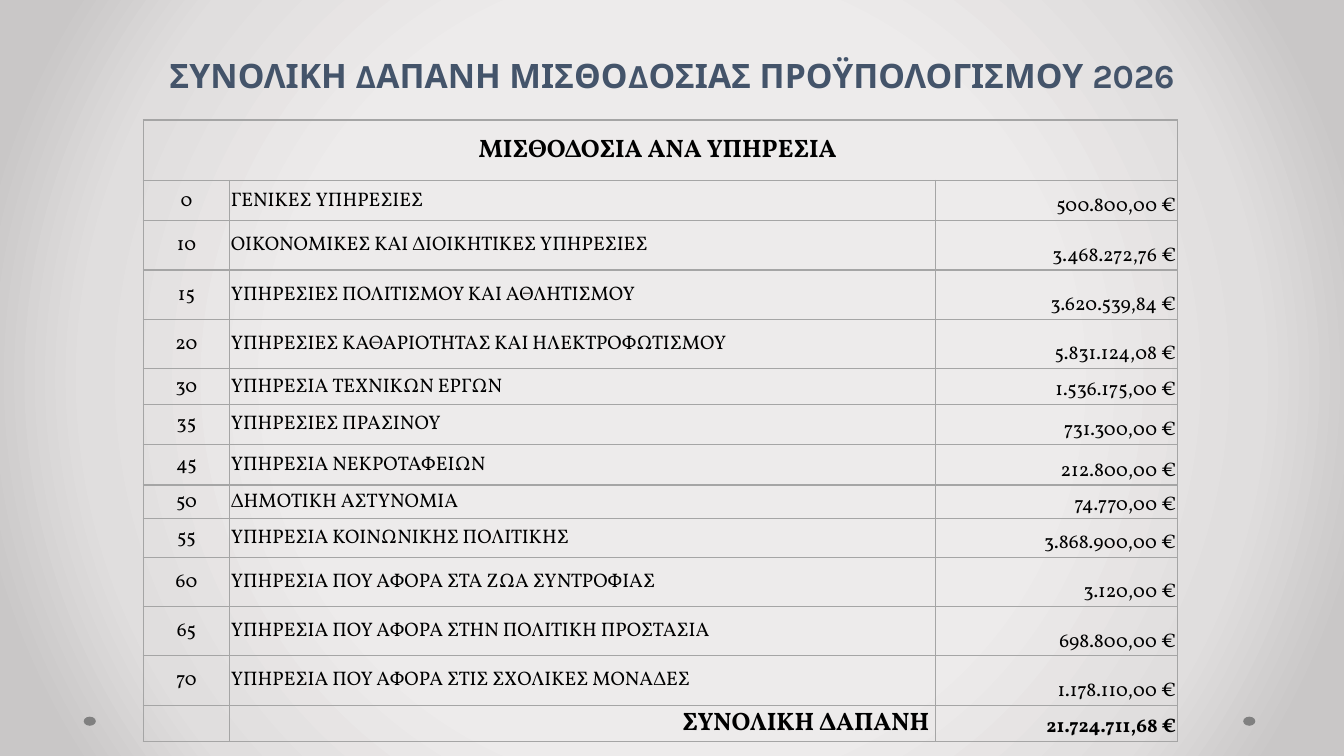
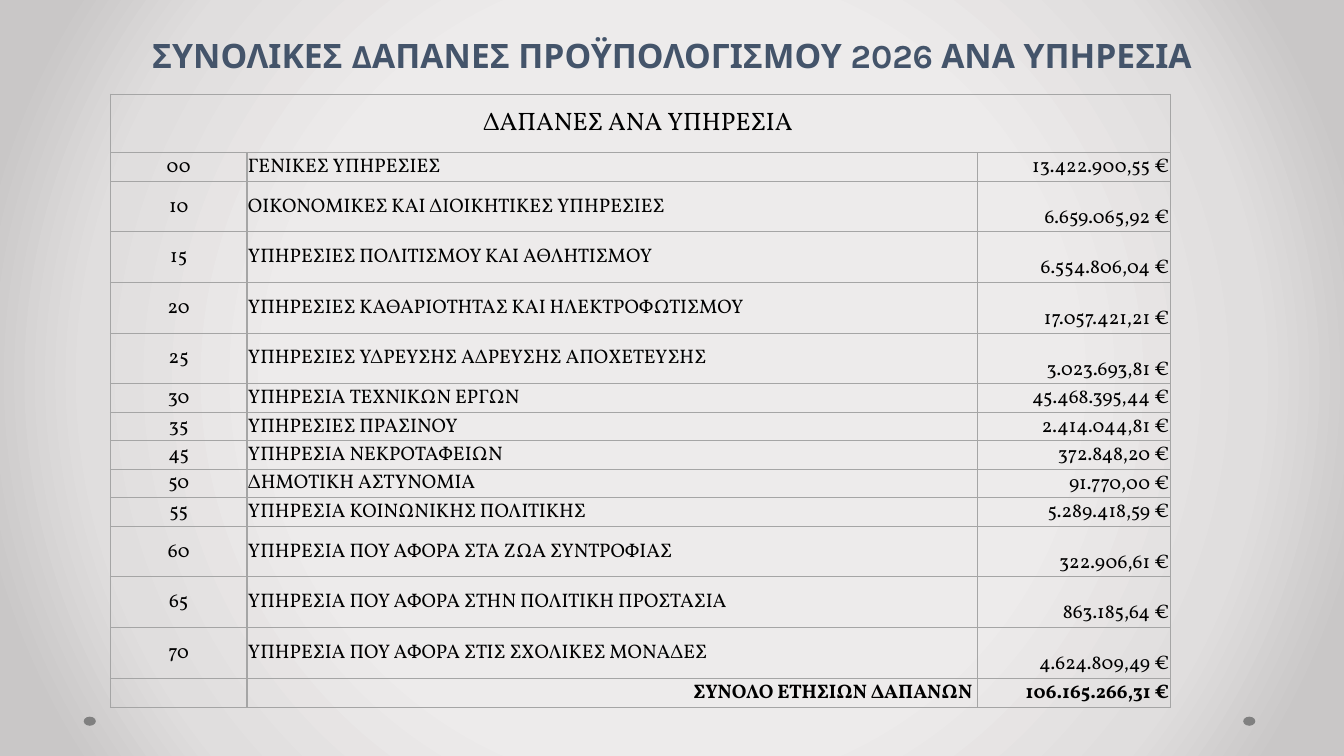
from pptx import Presentation, oxml
from pptx import util as u
from pptx.dml.color import RGBColor
from pptx.enum import shapes, text
from pptx.oxml.ns import nsdecls, qn

HUES = {"title": "44546A", "body": "000000", "rule": "A5A5A5", "dot": "808080"}
GLOW = {50: "EDEBEB", 76: "E0DEDE", 92: "C9C7C7"}
LEFT, MID, RIGHT = text.PP_ALIGN.LEFT, text.PP_ALIGN.CENTER, text.PP_ALIGN.RIGHT
MIDDLE, BOTTOM = text.MSO_ANCHOR.MIDDLE, text.MSO_ANCHOR.BOTTOM
INSETS = {"margin_left": u.Inches(0.01), "margin_top": u.Inches(0.01),
          "margin_right": u.Inches(0.01), "margin_bottom": 0}

NAMES = {
    0: "ΓΕΝΙΚΕΣ ΥΠΗΡΕΣΙΕΣ",
    10: "ΟΙΚΟΝΟΜΙΚΕΣ ΚΑΙ ΔΙΟΙΚΗΤΙΚΕΣ ΥΠΗΡΕΣΙΕΣ",
    15: "ΥΠΗΡΕΣΙΕΣ ΠΟΛΙΤΙΣΜΟΥ ΚΑΙ ΑΘΛΗΤΙΣΜΟΥ",
    20: "ΥΠΗΡΕΣΙΕΣ ΚΑΘΑΡΙΟΤΗΤΑΣ ΚΑΙ ΗΛΕΚΤΡΟΦΩΤΙΣΜΟΥ",
    25: "ΥΠΗΡΕΣΙΕΣ ΥΔΡΕΥΣΗΣ ΑΔΡΕΥΣΗΣ ΑΠΟΧΕΤΕΥΣΗΣ",
    30: "ΥΠΗΡΕΣΙΑ ΤΕΧΝΙΚΩΝ ΕΡΓΩΝ",
    35: "ΥΠΗΡΕΣΙΕΣ ΠΡΑΣΙΝΟΥ",
    45: "ΥΠΗΡΕΣΙΑ ΝΕΚΡΟΤΑΦΕΙΩΝ",
    50: "ΔΗΜΟΤΙΚΗ ΑΣΤΥΝΟΜΙΑ",
    55: "ΥΠΗΡΕΣΙΑ ΚΟΙΝΩΝΙΚΗΣ ΠΟΛΙΤΙΚΗΣ",
    60: "ΥΠΗΡΕΣΙΑ ΠΟΥ ΑΦΟΡΑ ΣΤΑ ΖΩΑ ΣΥΝΤΡΟΦΙΑΣ",
    65: "ΥΠΗΡΕΣΙΑ ΠΟΥ ΑΦΟΡΑ ΣΤΗΝ ΠΟΛΙΤΙΚΗ ΠΡΟΣΤΑΣΙΑ",
    70: "ΥΠΗΡΕΣΙΑ ΠΟΥ ΑΦΟΡΑ ΣΤΙΣ ΣΧΟΛΙΚΕΣ ΜΟΝΑΔΕΣ",
}

# Places and sizes are percentages of the slide's width and height.
PAGES = [
    {"title": "ΣΥΝΟΛΙΚΗ ΔΑΠΑΝΗ ΜΙΣΘΟΔΟΣΙΑΣ ΠΡΟΫΠΟΛΟΓΙΣΜΟΥ 2026",
     "box": (5, 4.67, 90, 8.53),
     "head": ("ΜΙΣΘΟΔΟΣΙΑ ΑΝΑ ΥΠΗΡΕΣΙΑ ", 18, True),
     "total": ("ΣΥΝΟΛΙΚΗ ΔΑΠΑΝΗ ", 18, "21.724.711,68 €"),
     "at": (10.65, 15.87), "cols": (6.45, 52.5, 18),
     "tall": 6.53, "ends": (8, 4.8),
     "low": {0: 5.33, 30: 4.75, 35: 5.25, 45: 5.4, 50: 4.47, 55: 5.07},
     "sums": {"0": "500.800,00 €", "10": "3.468.272,76 €",
              "15": "3.620.539,84 €", "20": "5.831.124,08 €",
              "30": "1.536.175,00 €", "35": "731.300,00 €",
              "45": "212.800,00 €", "50": "74.770,00 €",
              "55": "3.868.900,00 €", "60": "3.120,00 €",
              "65": "698.800,00 €", "70": "1.178.110,00 €"}},
    {"title": "ΣΥΝΟΛΙΚΕΣ ΔΑΠΑΝΕΣ ΠΡΟΫΠΟΛΟΓΙΣΜΟΥ 2026 ΑΝΑ ΥΠΗΡΕΣΙΑ",
     "box": (5, 3.73, 90, 6.93),
     "head": ("ΔΑΠΑΝΕΣ ΑΝΑ ΥΠΗΡΕΣΙΑ ", 18, False),
     "total": ("ΣΥΝΟΛΟ ΕΤΗΣΙΩΝ ΔΑΠΑΝΩΝ ", 14, "106.165.266,31 €"),
     "at": (8.22, 12.48), "cols": (10.16, 54.35, 14.36),
     "tall": 6.7, "ends": (7.73, 3.77),
     "low": dict.fromkeys((0, 30, 35, 45, 50, 55), 3.77),
     "sums": {"00": "13.422.900,55 €", "10": "6.659.065,92 €",
              "15": "6.554.806,04 €", "20": "17.057.421,21 €",
              "25": "3.023.693,81 €", "30": "45.468.395,44 €",
              "35": "2.414.044,81 €", "45": "372.848,20 €",
              "50": "91.770,00 €", "55": "5.289.418,59 €",
              "60": "322.906,61 €", "65": "863.185,64 €",
              "70": "4.624.809,49 €"}},
]


def put(obj, vals):
    for key, val in vals.items():
        setattr(obj, key, val)


class Deck:
    """The shared style and the slide being filled."""

    def __init__(self):
        self.prs = Presentation()
        put(self.prs, {"slide_width": u.Inches(13.33), "slide_height": u.Inches(7.5)})
        self.plan = self.prs.slide_layouts[5]
        self.page = None
        self.glow()

    def x(self, pct):
        return round(self.prs.slide_width * pct / 100)

    def y(self, pct):
        return round(self.prs.slide_height * pct / 100)

    def glow(self):
        """Give the master its round gradient."""
        master = self.prs.slide_master
        master.background.fill.gradient()
        old = master.element.find(".//" + qn("a:gradFill"))
        stops = "".join(f'<a:gs pos="{pos * 1000}"><a:srgbClr val="{hue}"/></a:gs>'
                        for pos, hue in GLOW.items())
        old.getparent().replace(old, oxml.parse_xml(
            f'<a:gradFill {nsdecls("a")} rotWithShape="1"><a:gsLst>{stops}</a:gsLst>'
            '<a:path path="circle"><a:fillToRect l="50000" t="50000" r="50000" '
            'b="50000"/></a:path></a:gradFill>'))

    def add(self):
        first = self.page is None
        self.page = self.prs.slides.add_slide(self.plan)
        if first:
            for left in (6.23, 92.5):
                self.dot(left)

    def dot(self, left):
        """Draw a dot and hand it to the layout, so every slide shows it."""
        dot = self.page.shapes.add_shape(shapes.MSO_SHAPE.OVAL, self.x(left),
                                         self.y(94.8), self.x(0.9), self.y(1.2))
        dot.shadow.inherit = False
        dot.fill.solid()
        dot.fill.fore_color.rgb = RGBColor.from_string(HUES["dot"])
        dot.line.fill.background()
        self.plan.element.cSld.spTree.append(dot.element)

    def ink(self, para, words, align, face, size, bold, hue):
        """Set a paragraph's words and their look."""
        para.alignment = align
        run = para.add_run()
        run.text = words
        put(run.font, {"name": face, "size": u.Pt(size), "bold": bold})
        run.font.color.rgb = RGBColor.from_string(HUES[hue])

    def title(self, words, box):
        left, top, wide, high = box
        head = self.page.shapes.title
        put(head, {"left": self.x(left), "top": self.y(top),
                   "width": self.x(wide), "height": self.y(high)})
        put(head.text_frame, {"vertical_anchor": BOTTOM, "word_wrap": True,
                              "auto_size": text.MSO_AUTO_SIZE.NONE})
        para = head.text_frame.paragraphs[0]
        para.line_spacing = u.Pt(48)
        self.ink(para, words, MID, "Karla", 24, True, "title")

    def cell(self, cell, words="", align=LEFT, anchor=MIDDLE, size=14, bold=False):
        put(cell, {**INSETS, "vertical_anchor": anchor})
        self.ink(cell.text_frame.paragraphs[0], words, align,
                 "Vollkorn", size, bold, "body")

    def rules(self, cell):
        """Clear the fill and rule all four sides."""
        cell.fill.background()
        props = cell._tc.get_or_add_tcPr()
        for spot, side in enumerate("LRTB"):
            props.insert(spot, oxml.parse_xml(
                f'<a:ln{side} {nsdecls("a")} w="12700"><a:solidFill><a:srgbClr '
                f'val="{HUES["rule"]}"/></a:solidFill></a:ln{side}>'))

    def table(self, page):
        codes = list(page["sums"])
        top, foot = page["ends"]
        rows = [top, *(page["low"].get(int(c), page["tall"]) for c in codes), foot]
        cols = page["cols"]
        left, start = page["at"]
        grid = self.page.shapes.add_table(
            len(rows), len(cols), self.x(left), self.y(start),
            self.x(sum(cols)), self.y(sum(rows))).table
        put(grid, {"first_row": False, "horz_banding": False})
        for col, wide in zip(grid.columns, cols):
            col.width = self.x(wide)
        for row, high in zip(grid.rows, rows):
            row.height = self.y(high)
        for cell in grid.iter_cells():
            self.rules(cell)

        words, size, bold = page["head"]
        grid.cell(0, 0).merge(grid.cell(0, 2))
        self.cell(grid.cell(0, 0), words, MID, size=size, bold=bold)
        for row, code in enumerate(codes, 1):
            self.cell(grid.cell(row, 0), code, MID)
            self.cell(grid.cell(row, 1), NAMES[int(code)])
            self.cell(grid.cell(row, 2), page["sums"][code], RIGHT, BOTTOM)
        last = len(rows) - 1
        words, size, total = page["total"]
        self.cell(grid.cell(last, 0))
        self.cell(grid.cell(last, 1), words, RIGHT, BOTTOM, size, True)
        self.cell(grid.cell(last, 2), total, RIGHT, BOTTOM, bold=True)


def main():
    deck = Deck()
    for page in PAGES:
        deck.add()
        deck.title(page["title"], page["box"])
        deck.table(page)
    deck.prs.save("out.pptx")


if __name__ == "__main__":
    main()
